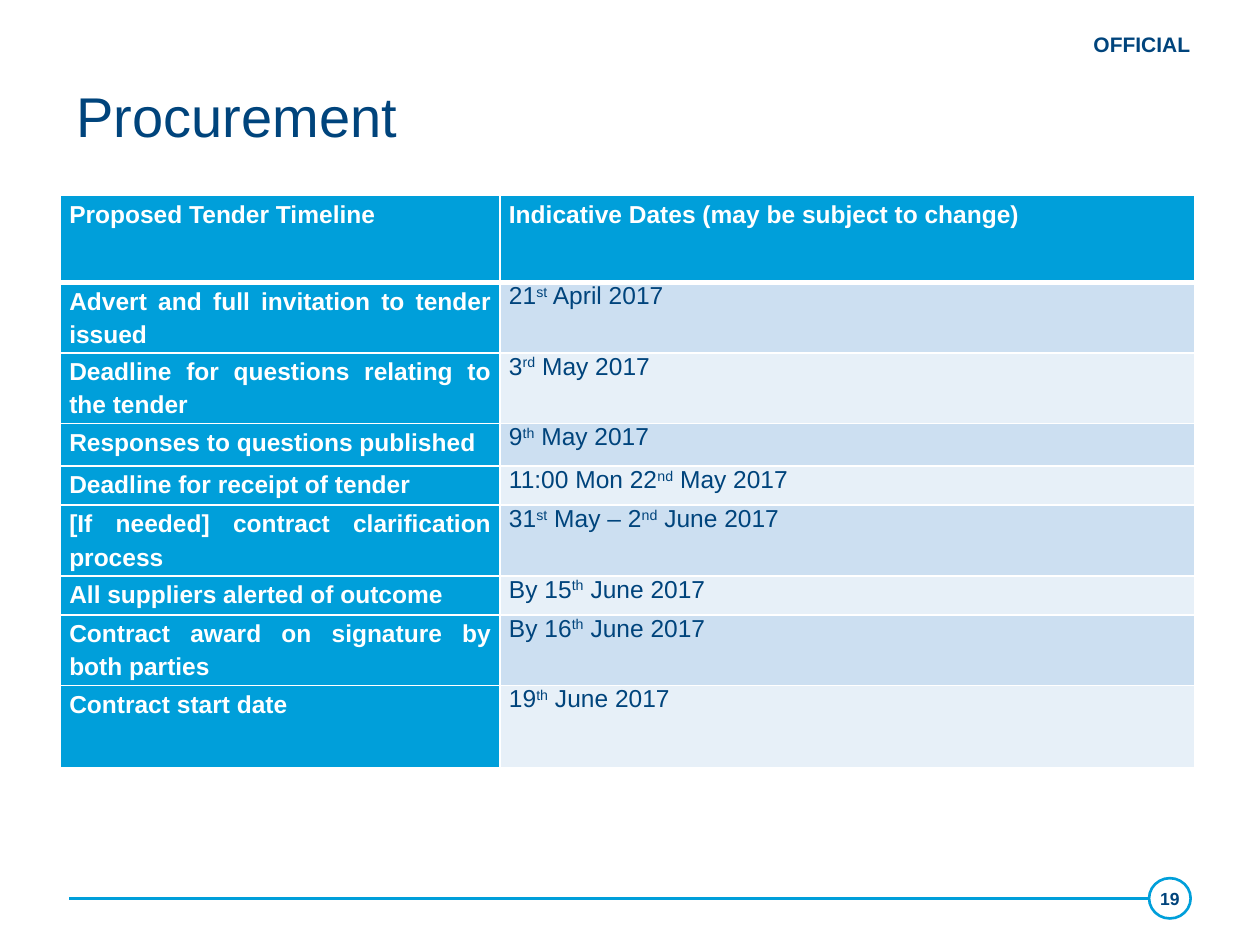
from dataclasses import dataclass

from lxml import etree
from pptx import Presentation
from pptx.dml.color import RGBColor
from pptx.enum.shapes import MSO_CONNECTOR, MSO_SHAPE
from pptx.enum.text import MSO_ANCHOR, PP_ALIGN
from pptx.oxml.ns import qn
from pptx.util import Inches, Pt

ELLIPSE = MSO_SHAPE.OVAL
STRAIGHT = MSO_CONNECTOR.STRAIGHT
LEFT, CENTER, JUSTIFY = PP_ALIGN.LEFT, PP_ALIGN.CENTER, PP_ALIGN.JUSTIFY
TOP, MIDDLE = MSO_ANCHOR.TOP, MSO_ANCHOR.MIDDLE

SLIDE_WIDTH, SLIDE_HEIGHT = Inches(10), Inches(7.5)


@dataclass(frozen=True)
class Theme:
    font: str = "Arial"
    navy: str = "00447C"
    blue: str = "009FDA"
    white: str = "FFFFFF"
    bands: tuple = ("CCDFF1", "E7F0F8")
    title_size: int = 32
    table_size: int = 14
    label_size: int = 12
    number_size: int = 10
    rule_width: float = 1.5


THEME = Theme()

HEADINGS = ("Proposed Tender Timeline", "Indicative Dates (may be subject to change)")
# Row height in percent of the slide, step, date; ^ marks enclose superscripts.
TWO_LINES, ONE_LINE = 7.47, 4.13
HEADER_HEIGHT = 9.2
TIMELINE = (
    (TWO_LINES, "Advert and full invitation to tender issued", "21^st^ April 2017"),
    (TWO_LINES, "Deadline for questions relating to the tender", "3^rd^ May 2017"),
    (4.53, "Responses to questions published", "9^th^ May 2017"),
    (ONE_LINE, "Deadline for receipt of tender", "11:00 Mon 22^nd^ May 2017"),
    (TWO_LINES, "[If needed] contract clarification process",
     "31^st^ May – 2^nd^ June 2017"),
    (ONE_LINE, "All suppliers alerted of outcome", "By 15^th^ June 2017"),
    (TWO_LINES, "Contract award on signature by both parties", "By 16^th^ June 2017"),
    (8.67, "Contract start date", "19^th^ June 2017"),
)
COLUMN_WIDTHS = (34.9, 55.1)


def across(percent):
    return round(SLIDE_WIDTH * percent / 100)


def down(percent):
    return round(SLIDE_HEIGHT * percent / 100)


def area(left, top, width, height):
    """Turn percentages of the slide into a position and size."""
    return across(left), down(top), across(width), down(height)


def color(code):
    return RGBColor.from_string(code)


def write(frame, text, *, size, ink=THEME.navy, bold=False, align=LEFT,
          spacing=None, after=None):
    """Write one paragraph; text between ^ marks is raised."""
    para = frame.paragraphs[0]
    para.alignment = align
    if spacing:
        para.line_spacing = spacing
    if after:
        para.space_after = Pt(after)
    for index, part in enumerate(text.split("^")):
        span = para.add_run()
        span.text = part
        span.font.name = THEME.font
        span.font.size = Pt(size)
        span.font.bold = bold
        span.font.color.rgb = color(ink)
        if index % 2:
            span.font._element.set("baseline", "30000")


def add_text(page, place, text, *, wrap=True, anchor=TOP, inset=(0.1, 0.05), **style):
    frame = page.shapes.add_textbox(*area(*place)).text_frame
    frame.word_wrap = wrap
    frame.vertical_anchor = anchor
    frame.margin_left = frame.margin_right = Inches(inset[0])
    frame.margin_top = frame.margin_bottom = Inches(inset[1])
    write(frame, text, **style)


def add_footer_rule(page):
    circle = page.shapes.add_shape(ELLIPSE, *area(91.2, 92.93, 3.3, 4.27))
    circle.shadow.inherit = False
    circle.fill.background()
    level = down(95.07)
    rule = page.shapes.add_connector(STRAIGHT, across(91.2), level, across(5.5), level)
    etree.SubElement(rule._element.spPr, qn("a:effectLst"))
    for item in (circle, rule):
        item.line.color.rgb = color(THEME.blue)
        item.line.width = Pt(THEME.rule_width)


def border_cell(cell, bottom):
    properties = cell._tc.get_or_add_tcPr()
    for side, width in (("L", 1), ("R", 1), ("T", 1), ("B", bottom)):
        line = etree.SubElement(properties, qn(f"a:ln{side}"), w=str(Pt(width)))
        fill = etree.SubElement(line, qn("a:solidFill"))
        etree.SubElement(fill, qn("a:srgbClr"), val=THEME.white)


def fill_cell(cell, text, background, *, bottom=1, **style):
    border_cell(cell, bottom)
    cell.fill.solid()
    cell.fill.fore_color.rgb = color(background)
    cell.margin_left = cell.margin_right = Inches(0.07)
    cell.margin_top = cell.margin_bottom = 0
    write(cell.text_frame, text, size=THEME.table_size, **style)


def add_timeline(page):
    heights = [HEADER_HEIGHT] + [height for height, _, _ in TIMELINE]
    place = area(4.8, 20.67, sum(COLUMN_WIDTHS), sum(heights))
    table = page.shapes.add_table(len(heights), len(COLUMN_WIDTHS), *place).table
    for column, width in zip(table.columns, COLUMN_WIDTHS):
        column.width = across(width)
    for row, height in zip(table.rows, heights):
        row.height = down(height)

    strong = {"ink": THEME.white, "bold": True, "align": JUSTIFY, "spacing": 1.2}
    for index, heading in enumerate(HEADINGS):
        fill_cell(table.cell(0, index), heading, THEME.blue, bottom=3, after=10, **strong)
    for index, (_, step, date) in enumerate(TIMELINE):
        fill_cell(table.cell(index + 1, 0), step, THEME.blue,  **strong)
        fill_cell(table.cell(index + 1, 1), date, THEME.bands[index % 2])
    for cell in table.rows[1].cells:
        cell._tc.tcPr.find(qn("a:lnT")).set("w", str(Pt(3)))


def main():
    deck = Presentation()
    deck.slide_width, deck.slide_height = SLIDE_WIDTH, SLIDE_HEIGHT
    page = deck.slides.add_slide(deck.slide_layouts[6])
    add_footer_rule(page)
    add_text(page, (85.8, 2.67, 9.8, 4), "OFFICIAL", wrap=False,
             size=THEME.label_size, bold=True)
    add_timeline(page)
    add_text(page, (5.1, 8, 83.5, 8.53), "Procurement", size=THEME.title_size)
    add_text(page, (91, 93.6, 3.7, 2.93), "19", anchor=MIDDLE, inset=(0.04, 0.05),
             size=THEME.number_size, bold=True, align=CENTER)
    deck.save("out.pptx")


if __name__ == "__main__":
    main()
